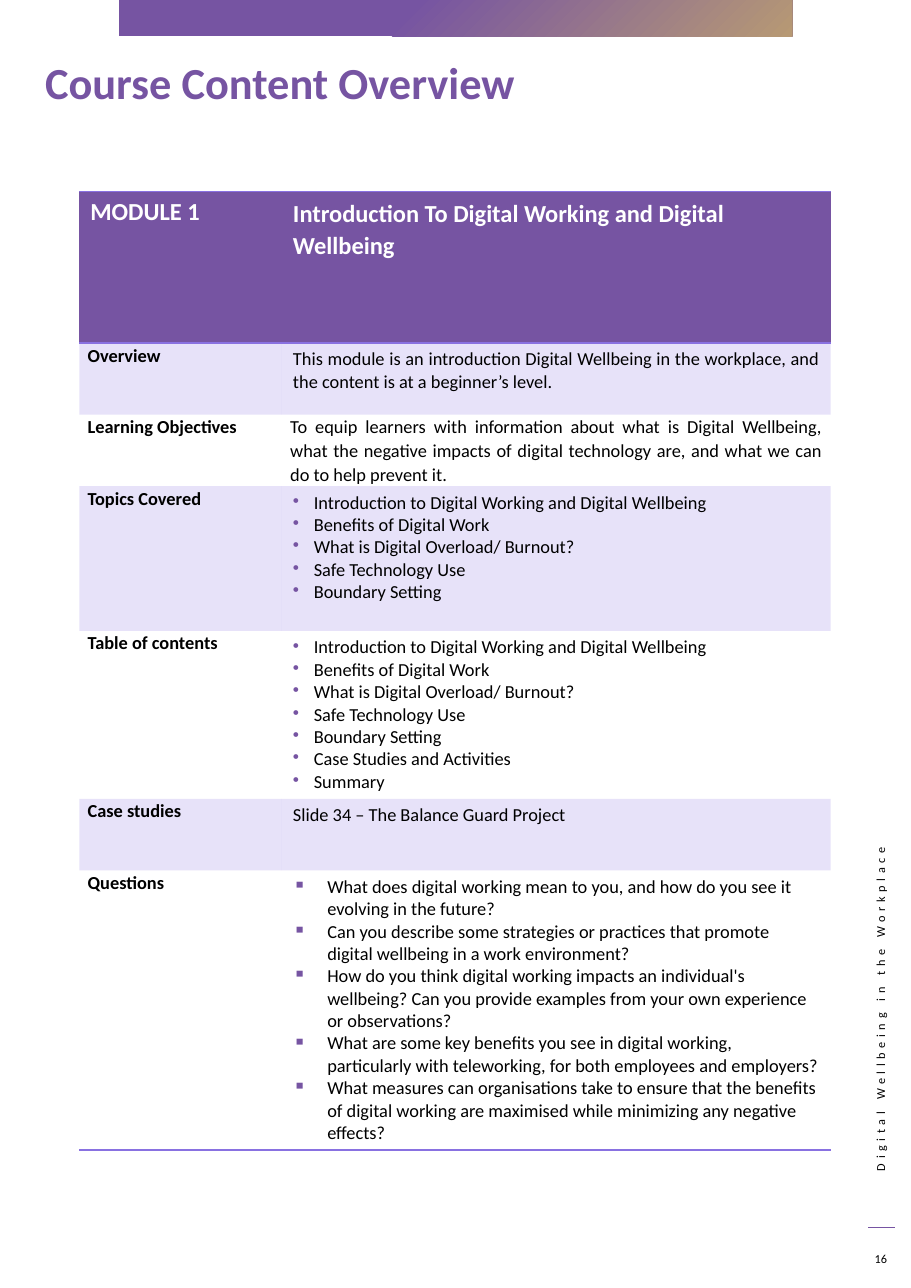
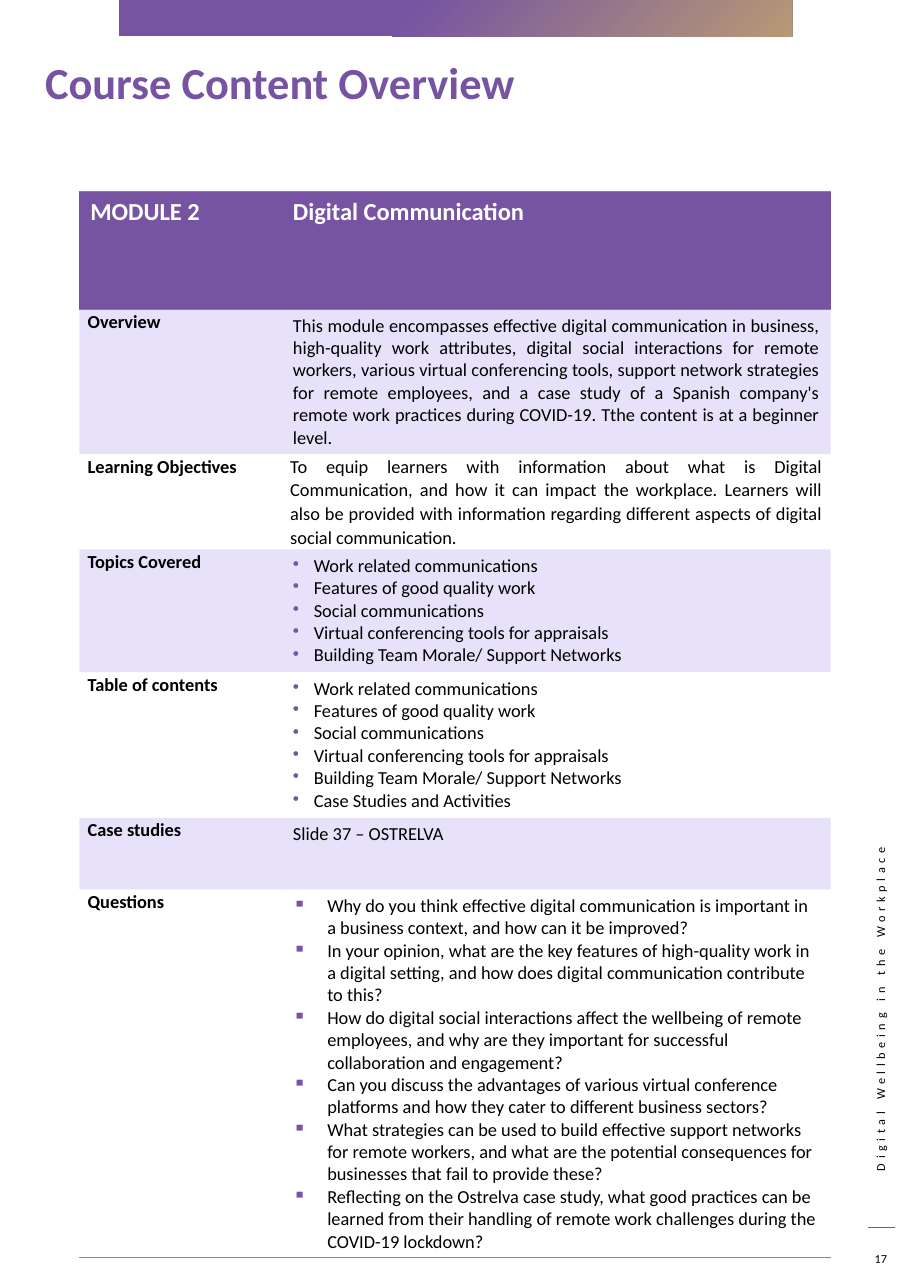
from dataclasses import dataclass

from pptx import Presentation
from pptx.dml.color import RGBColor
from pptx.enum.shapes import MSO_CONNECTOR, MSO_SHAPE
from pptx.enum.text import MSO_ANCHOR, PP_ALIGN
from pptx.oxml.ns import qn
from pptx.util import Cm, Pt
from lxml.etree import SubElement

FONT = "Calibri"
PURPLE, LILAC, SAND = "7654A2", "8971E1", "B79974"
BLACK, WHITE = "000000", "FFFFFF"
PLAIN_TABLE = "{2D5ABB26-0587-4C30-8999-92F81FD0307C}"
COLUMNS = (4.67, 12.65)
DOT, SQUARE = ("•", 0.48), ("▪", 0.79)  # bullet sign, indent in cm


@dataclass
class Module:
    page_number: int
    name: str
    title: str
    title_spacing: float
    overview: str
    objectives: str
    topics: list
    further_contents: list
    case_study: str
    questions: list
    row_heights: tuple


MODULES = [
    Module(
        16, "MODULE 1", "Introduction To Digital Working and Digital Wellbeing", 1.07,
        "This module is an introduction Digital Wellbeing in the workplace, and the content "
        "is at a beginner’s level.",
        "To equip learners with information about what is Digital Wellbeing, what the negative "
        "impacts of digital technology are, and what we can do to help prevent it.",
        ["Introduction to Digital Working and Digital Wellbeing",
         "Benefits of Digital Work",
         "What is Digital Overload/ Burnout?",
         "Safe Technology Use",
         "Boundary Setting"],
        ["Case Studies and Activities", "Summary"],
        "Slide 34 – The Balance Guard Project",
        ["What does digital working mean to you, and how do you see it evolving in the future?",
         "Can you describe some strategies or practices that promote digital wellbeing in a "
         "work environment?",
         "How do you think digital working impacts an individual's wellbeing? Can you provide "
         "examples from your own experience or observations?",
         "What are some key benefits you see in digital working, particularly with teleworking, "
         "for both employees and employers?",
         "What measures can organisations take to ensure that the benefits of digital working "
         "are maximised while minimizing any negative effects?"],
        (3.5, 1.65, 1.65, 3.34, 3.87, 1.65, 6.45),
    ),
    Module(
        17, "MODULE 2", "Digital Communication", 1,
        "This module encompasses effective digital communication in business, high-quality work "
        "attributes, digital social interactions for remote workers, various virtual "
        "conferencing tools, support network strategies for remote employees, and a case study "
        "of a Spanish company's remote work practices during COVID-19. Tthe content is at a "
        "beginner level.",
        "To equip learners with information about what is Digital Communication, and how it can "
        "impact the workplace. Learners will also be provided with information regarding "
        "different aspects of digital social communication.",
        ["Work related communications",
         "Features of good quality work",
         "Social communications",
         "Virtual conferencing tools for appraisals",
         "Building Team Morale/ Support Networks"],
        ["Case Studies and Activities"],
        "Slide 37 – OSTRELVA",
        ["Why do you think effective digital communication is important in a business context, "
         "and how can it be improved?",
         "In your opinion, what are the key features of high-quality work in a digital setting, "
         "and how does digital communication contribute to this?",
         "How do digital social interactions affect the wellbeing of remote employees, and why "
         "are they important for successful collaboration and engagement?",
         "Can you discuss the advantages of various virtual conference platforms and how they "
         "cater to different business sectors?",
         "What strategies can be used to build effective support networks for remote workers, "
         "and what are the potential consequences for businesses that fail to provide these?",
         "Reflecting on the Ostrelva case study, what good practices can be learned from their "
         "handling of remote work challenges during the COVID-19 lockdown?"],
        (2.72, 3.34, 2.2, 2.83, 3.36, 1.65, 8.48),
    ),
]


def color(code):
    return RGBColor.from_string(code)


def style(para, size, code=BLACK, bold=False, align=PP_ALIGN.LEFT):
    para.alignment = align
    font = para.font
    font.name, font.size, font.bold = FONT, Pt(size), bold
    font.color.rgb = color(code)


def add_text(page, text, left, top, width, height, size, **look):
    box = page.shapes.add_textbox(Cm(left), Cm(top), Cm(width), Cm(height))
    box.text_frame.word_wrap = True
    para = box.text_frame.paragraphs[0]
    para.text = text
    style(para, size, **look)
    return box


# Page furniture: band, title, side text, rule and page number
def add_band(page):
    band = page.shapes.add_shape(MSO_SHAPE.RECTANGLE, Cm(2.74), 0, Cm(15.52), Cm(0.84))
    band.shadow.inherit = False
    band.line.fill.background()
    band.fill.gradient()
    for stop, code, position in zip(band.fill.gradient_stops, (SAND, PURPLE), (0, 0.58)):
        stop.color.rgb, stop.position = color(code), position
    gradient = band._element.spPr.find(qn("a:gradFill"))
    gradient.remove(gradient.find(qn("a:lin")))
    circle = SubElement(gradient, qn("a:path"), path="circle")
    SubElement(circle, qn("a:fillToRect"), l="100000", t="100000")


def add_frame(page, page_number):
    add_band(page)
    add_text(page, "Course Content Overview", 0.79, 1.15, 18.06, 2.06, 29,
             code=PURPLE, bold=True)

    side = add_text(page, "Digital Wellbeing in the Workplace", 15.9, 23.39, 8.81, 0.61, 8,
                    align=PP_ALIGN.RIGHT)
    side.rotation = 270
    span = side.text_frame.paragraphs[0].runs[0]
    span._r.get_or_add_rPr().set("spc", "300")

    rule = page.shapes.add_connector(MSO_CONNECTOR.STRAIGHT,
                                     Cm(20.02), Cm(28.3), Cm(20.62), Cm(28.3))
    rule.line.color.rgb = color(PURPLE)
    rule.line.width = Pt(0.75)
    SubElement(rule._element.spPr, qn("a:effectLst"))

    number = add_text(page, str(page_number), 19.81, 28.65, 0.99, 0.74, 8,
                      align=PP_ALIGN.CENTER)
    number.text_frame.vertical_anchor = MSO_ANCHOR.MIDDLE


# Table cells
def add_bullet(para, sign, indent):
    properties = para._p.get_or_add_pPr()
    properties.set("marL", str(Cm(indent)))
    properties.set("indent", str(-Cm(indent)))
    SubElement(SubElement(properties, qn("a:buClr")), qn("a:srgbClr"), val=PURPLE)
    SubElement(properties, qn("a:buChar"), char=sign)


def write_cell(cell, lines, size=12, bullet=None, compact=False, spacing=1, **look):
    if compact:
        cell.margin_left = cell.margin_right = Cm(0.19)
        cell.margin_top = cell.margin_bottom = 0
        spacing = 1.07
    cell.text = "\n".join(lines)
    for para in cell.text_frame.paragraphs:
        if bullet:
            add_bullet(para, *bullet)
        if spacing != 1:
            para.line_spacing = spacing
        if compact:
            para.space_after = Pt(8)
        style(para, size, **look)


def add_borders(cell, *sides):
    for side in sides:
        line = SubElement(cell._tc.get_or_add_tcPr(), qn("a:" + side), w=str(Pt(1)))
        SubElement(SubElement(line, qn("a:solidFill")), qn("a:srgbClr"), val=LILAC)


def fill_cell(cell, code=None, opacity=100):
    if code is None:
        cell.fill.background()
        return
    cell.fill.solid()
    cell.fill.fore_color.rgb = color(code)
    if opacity < 100:
        tint = cell._tc.tcPr.find(qn("a:solidFill")).find(qn("a:srgbClr"))
        SubElement(tint, qn("a:alpha"), val=str(opacity * 1000))


def add_module_table(page, module):
    justified = {"align": PP_ALIGN.JUSTIFY}
    rows = [
        ("Overview", [module.overview], justified),
        ("Learning Objectives", [module.objectives], {"compact": True, **justified}),
        ("Topics Covered", module.topics, {"bullet": DOT}),
        ("Table of contents", module.topics + module.further_contents, {"bullet": DOT}),
        ("Case studies", [module.case_study], {}),
        ("Questions", module.questions, {"bullet": SQUARE}),
    ]
    heights = module.row_heights
    table = page.shapes.add_table(len(heights), len(COLUMNS), Cm(1.83), Cm(4.41),
                                  Cm(sum(COLUMNS)), Cm(sum(heights))).table
    table.first_row = table.horz_banding = False
    table._tbl.tblPr.find(qn("a:tableStyleId")).text = PLAIN_TABLE
    for column, width in zip(table.columns, COLUMNS):
        column.width = Cm(width)
    for row, height in zip(table.rows, heights):
        row.height = Cm(height)

    # Header row
    heading = {"size": 16, "code": WHITE, "bold": True}
    write_cell(table.cell(0, 0), [module.name], **heading)
    write_cell(table.cell(0, 1), [module.title], spacing=module.title_spacing, **heading)
    for cell in table.rows[0].cells:
        add_borders(cell, "lnT", "lnB")
        fill_cell(cell, PURPLE)

    # Body rows, every other one tinted
    for index, (label, lines, look) in enumerate(rows, start=1):
        write_cell(table.cell(index, 0), [label], compact=True, bold=True)
        write_cell(table.cell(index, 1), lines, **look)
        for cell in table.rows[index].cells:
            if index == len(rows):
                add_borders(cell, "lnB")
            fill_cell(cell, LILAC if index % 2 else None, opacity=20)


def main():
    deck = Presentation()
    deck.slide_width, deck.slide_height = Cm(21), Cm(29.7)
    for module in MODULES:
        page = deck.slides.add_slide(deck.slide_layouts[6])
        add_frame(page, module.page_number)
        add_module_table(page, module)
    deck.save("out.pptx")


if __name__ == "__main__":
    main()
